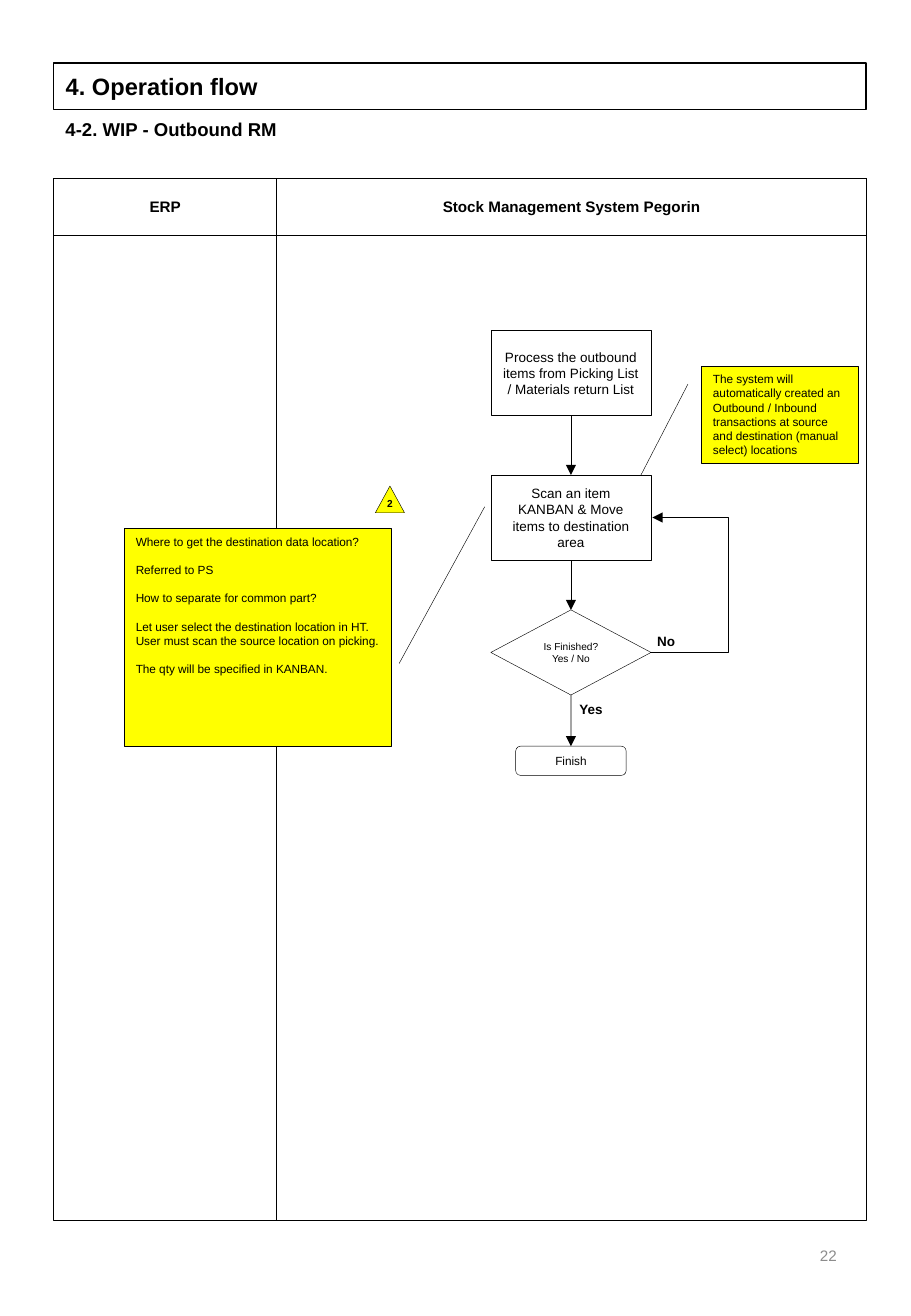
from lxml.etree import SubElement
from pptx import Presentation
from pptx.dml.color import RGBColor
from pptx.enum.shapes import MSO_CONNECTOR, MSO_SHAPE
from pptx.enum.text import MSO_ANCHOR, MSO_AUTO_SIZE, PP_ALIGN
from pptx.oxml.ns import qn
from pptx.util import Cm, Pt

COLORS = {"ink": "000000", "note": "FFFF00", "page_number": "8C8C8C"}
FONT = "Arial"

FRAME_LEFT, FRAME_TOP, FRAME_WIDTH, FRAME_HEIGHT = 1.12, 3.73, 16.99, 21.77
FRAME_RIGHT = FRAME_LEFT + FRAME_WIDTH
HEADER_HEIGHT = 1.19
DIVIDER = 5.79
FLOW_CENTER = 11.94
STEP_WIDTH, STEP_HEIGHT = 3.35, 1.78
STEP_RIGHT = FLOW_CENTER + STEP_WIDTH / 2
LOOP_GAP, LOOP_RIGHT = 0.03, 15.24

NOTE_PARAGRAPHS = [
    "Where to get the destination data location?",
    "Referred to PS",
    "How to separate for common part?",
    "Let user select the destination location in HT.",
    "User must scan the source location on picking.",
    "The qty will be specified in KANBAN.",
]


def color(name):
    return RGBColor.from_string(COLORS[name])


def place(shape, left, top, width, height):
    shape.left, shape.top = Cm(left), Cm(top)
    shape.width, shape.height = Cm(width), Cm(height)


def outline(shape, weight):
    shape.line.color.rgb = color("ink")
    shape.line.width = Pt(weight)


def write(shape, text, size, bold=False, align=PP_ALIGN.CENTER, anchor=MSO_ANCHOR.MIDDLE, ink="ink"):
    frame = shape.text_frame
    frame.text = text
    frame.word_wrap = True
    frame.auto_size = MSO_AUTO_SIZE.NONE
    frame.vertical_anchor = anchor
    for paragraph in frame.paragraphs:
        paragraph.alignment = align
        for run in paragraph.runs:
            run.font.name = FONT
            run.font.size = Pt(size)
            run.font.bold = bold
            run.font.color.rgb = color(ink)


def add_label(slide, box, text, size, **style):
    label = slide.shapes.add_textbox(*map(Cm, box))
    write(label, text, size, **style)


def add_box(slide, kind, box, fill=None):
    shape = slide.shapes.add_shape(kind, *map(Cm, box))
    shape.shadow.inherit = False
    outline(shape, 0.25)
    if fill:
        shape.fill.solid()
        shape.fill.fore_color.rgb = color(fill)
    else:
        shape.fill.background()
    return shape


def add_step(slide, kind, top, text, size, width=STEP_WIDTH, height=STEP_HEIGHT):
    step = add_box(slide, kind, (FLOW_CENTER - width / 2, top, width, height))
    write(step, text, size)
    return step


def add_line(slide, start, end, kind=MSO_CONNECTOR.STRAIGHT, arrow=False):
    line = slide.shapes.add_connector(kind, *map(Cm, start + end))
    outline(line, 0.5)
    if arrow:
        SubElement(line.line._get_or_add_ln(), qn("a:tailEnd"), type="triangle")
    SubElement(line._element.spPr, qn("a:effectLst"))
    return line


def link_steps(slide, upper, lower):
    line = add_line(slide, (0, 0), (0, 0), arrow=True)
    line.begin_connect(upper, 2)
    line.end_connect(lower, 0)


def add_loop(slide, start_y, end_y):
    end_x = STEP_RIGHT + LOOP_GAP
    line = add_line(slide, (STEP_RIGHT, start_y), (end_x, end_y), MSO_CONNECTOR.ELBOW, arrow=True)
    bend = round((LOOP_RIGHT - STEP_RIGHT) / LOOP_GAP * 100000)
    guides = line._element.spPr.find(qn("a:prstGeom")).find(qn("a:avLst"))
    SubElement(guides, qn("a:gd"), name="adj1", fmla=f"val {bend}")


def add_headings(slide):
    title = slide.shapes.title
    place(title, FRAME_LEFT, 1.32, FRAME_WIDTH, 0.97)
    outline(title, 1)
    write(title, "4. Operation flow", 14, bold=True, align=PP_ALIGN.LEFT)
    add_label(slide, (FRAME_LEFT, 2.34, FRAME_WIDTH, 0.74), "4-2. WIP - Outbound RM", 11,
              bold=True, align=PP_ALIGN.LEFT, anchor=MSO_ANCHOR.TOP)
    add_label(slide, (13.46, 25.5, 4.29, 1.47), "22", 9, align=PP_ALIGN.RIGHT, ink="page_number")


def add_lanes(slide):
    for height in (FRAME_HEIGHT, HEADER_HEIGHT):
        add_box(slide, MSO_SHAPE.RECTANGLE, (FRAME_LEFT, FRAME_TOP, FRAME_WIDTH, height))
    add_line(slide, (DIVIDER, FRAME_TOP), (DIVIDER, FRAME_TOP + FRAME_HEIGHT))
    lanes = [("ERP", FRAME_LEFT, DIVIDER), ("Stock Management System Pegorin", DIVIDER, FRAME_RIGHT)]
    for name, left, right in lanes:
        add_label(slide, (left, FRAME_TOP, right - left, HEADER_HEIGHT), name, 9, bold=True)


def add_flow(slide):
    process = add_step(slide, MSO_SHAPE.RECTANGLE, 6.91,
                       "Process the outbound items from Picking List / Materials return List", 8)
    scan = add_step(slide, MSO_SHAPE.RECTANGLE, 9.93,
                    "Scan an item KANBAN & Move items to destination area", 8)
    decision = add_step(slide, MSO_SHAPE.FLOWCHART_DECISION, 12.75, "Is Finished?\nYes / No", 6)
    finish = add_step(slide, MSO_SHAPE.ROUNDED_RECTANGLE, 15.6, "Finish", 7, width=2.31, height=0.61)
    steps = [process, scan, decision, finish]
    for upper, lower in zip(steps, steps[1:]):
        link_steps(slide, upper, lower)
    add_loop(slide, 12.75 + STEP_HEIGHT / 2, 9.93 + STEP_HEIGHT / 2)
    for answer, left, top in [("Yes", 11.71, 14.53), ("No", 13.28, 13.11)]:
        add_label(slide, (left, top, 1.3, 0.58), answer, 8, bold=True)


def add_notes(slide):
    system_note = add_box(slide, MSO_SHAPE.LINE_CALLOUT_1, (14.66, 7.65, 3.28, 2.03), "note")
    write(system_note, "The system will automatically created an Outbound / Inbound transactions "
          "at source and destination (manual select) locations", 7, align=PP_ALIGN.LEFT)

    location_note = add_box(slide, MSO_SHAPE.LINE_CALLOUT_1, (2.59, 11.05, 5.59, 4.55), "note")
    for index, value in enumerate((0.62, 1.03, -0.1, 1.35)):
        location_note.adjustments[index] = value
    write(location_note, "\n".join(NOTE_PARAGRAPHS), 7, align=PP_ALIGN.LEFT, anchor=MSO_ANCHOR.TOP)
    for paragraph in location_note.text_frame.paragraphs[1:]:
        if not paragraph.text.startswith("User"):
            paragraph.space_before = Pt(8.4)

    marker = add_box(slide, MSO_SHAPE.ISOSCELES_TRIANGLE, (7.85, 10.16, 0.61, 0.56), "note")
    write(marker, "2", 6, bold=True)
    frame = marker.text_frame
    frame.margin_left = frame.margin_right = frame.margin_top = Cm(0)


def main():
    presentation = Presentation()
    presentation.slide_width, presentation.slide_height = Cm(19.05), Cm(27.51)
    slide = presentation.slides.add_slide(presentation.slide_layouts[5])
    add_headings(slide)
    add_lanes(slide)
    add_flow(slide)
    add_notes(slide)
    presentation.save("out.pptx")


if __name__ == "__main__":
    main()
